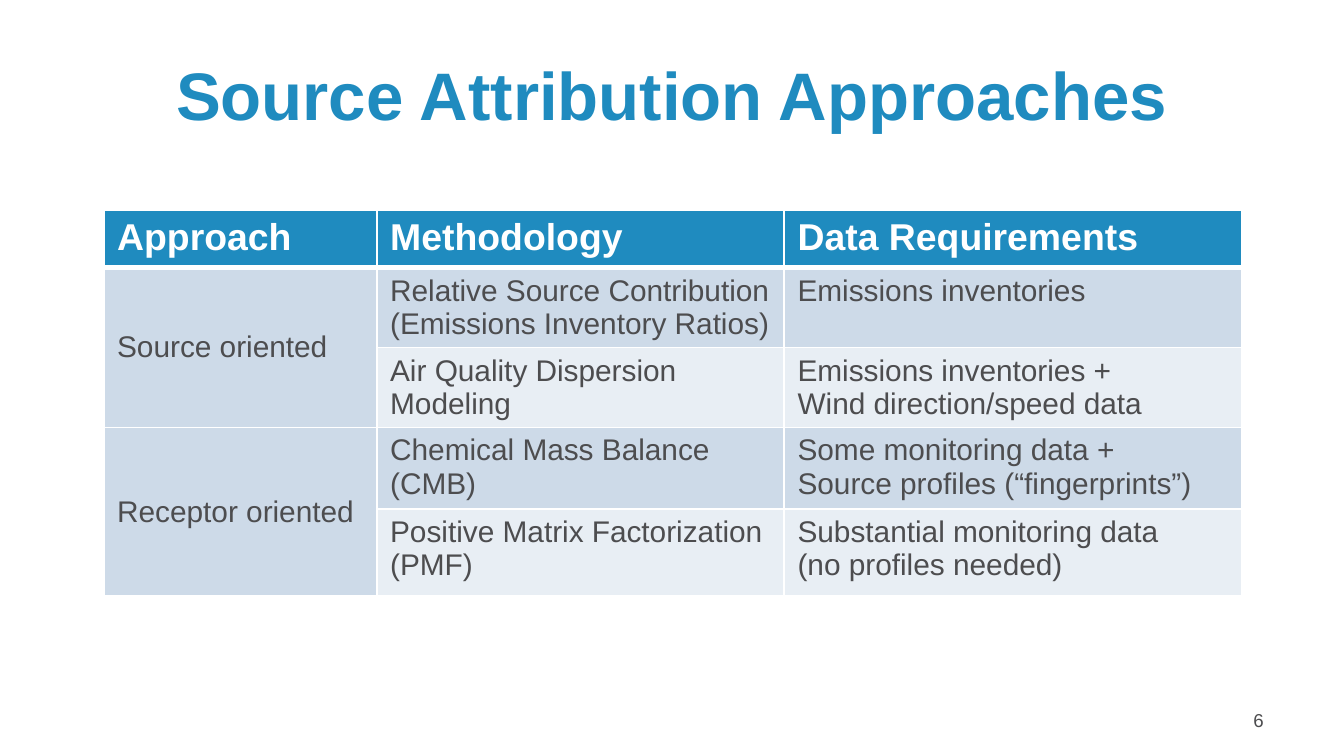
from dataclasses import dataclass

from lxml import etree
from pptx import Presentation
from pptx import util as u
from pptx.dml.color import RGBColor
from pptx.enum import text
from pptx.oxml import ns


@dataclass(frozen=True)
class Theme:
    font: str = "Arial"
    accent: str = "1F8BBF"
    ink: str = "4D4D4F"
    white: str = "FFFFFF"
    band_dark: str = "CDDAE8"
    band_light: str = "E8EEF4"
    title_size: int = 36
    header_size: int = 20
    body_size: int = 16
    number_size: int = 10
    thin_rule: int = 1
    thick_rule: int = 3


class SlideBuilder:
    def __init__(self, slide, theme):
        self.slide = slide
        self.theme = theme

    def add_lines(self, frame, lines, size, color, bold=False, align=None):
        """Fill a text frame with one paragraph per line."""
        for index, line in enumerate(lines):
            paragraph = frame.add_paragraph() if index else frame.paragraphs[0]
            paragraph.alignment = align
            run = paragraph.add_run()
            run.text = line
            run.font.name = self.theme.font
            run.font.size = u.Pt(size)
            run.font.bold = bold
            run.font.color.rgb = RGBColor.from_string(color)

    def title(self, words, left, top, width, height):
        heading = self.slide.shapes.title
        heading.left, heading.top = u.Cm(left), u.Cm(top)
        heading.width, heading.height = u.Cm(width), u.Cm(height)
        frame = heading.text_frame
        frame.auto_size = text.MSO_AUTO_SIZE.NONE
        frame.vertical_anchor = text.MSO_ANCHOR.MIDDLE
        self.add_lines(frame, [words], self.theme.title_size,
                       self.theme.accent, True, text.PP_ALIGN.CENTER)

    def page_number(self, number, left, top, width, height):
        box = self.slide.shapes.add_textbox(
            u.Cm(left), u.Cm(top), u.Cm(width), u.Cm(height))
        frame = box.text_frame
        frame.word_wrap = True
        frame.vertical_anchor = text.MSO_ANCHOR.MIDDLE
        self.add_lines(frame, [number], self.theme.number_size,
                       self.theme.ink, align=text.PP_ALIGN.RIGHT)

    def borders(self, cell, top, bottom):
        properties = cell._tc.get_or_add_tcPr()
        thin = self.theme.thin_rule
        for side, width in zip("LRTB", (thin, thin, top, bottom)):
            line = etree.SubElement(properties, ns.qn(f"a:ln{side}"),
                                    w=str(u.Pt(width)))
            fill = etree.SubElement(line, ns.qn("a:solidFill"))
            etree.SubElement(fill, ns.qn("a:srgbClr"), val=self.theme.white)

    def table(self, rows, left, top, widths, heights):
        theme = self.theme
        grid = self.slide.shapes.add_table(
            len(rows), len(widths), u.Cm(left), u.Cm(top),
            u.Cm(sum(widths)), u.Cm(sum(heights))).table
        for column, width in zip(grid.columns, widths):
            column.width = u.Cm(width)
        for row, height in zip(grid.rows, heights):
            row.height = u.Cm(height)

        for r, row in enumerate(rows):
            for c, lines in enumerate(row):
                cell = grid.cell(r, c)
                self.borders(
                    cell,
                    top=theme.thick_rule if r == 1 else theme.thin_rule,
                    bottom=theme.thick_rule if r == 0 else theme.thin_rule)
                band = theme.band_dark if r % 2 else theme.band_light
                cell.fill.solid()
                cell.fill.fore_color.rgb = RGBColor.from_string(
                    band if r else theme.accent)
                if lines is None:  # continues the cell above
                    grid.cell(r - 1, c).merge(cell)
                    grid.cell(r - 1, c).vertical_anchor = text.MSO_ANCHOR.MIDDLE
                elif r == 0:
                    self.add_lines(cell.text_frame, lines, theme.header_size,
                                   theme.white, True)
                else:
                    self.add_lines(cell.text_frame, lines, theme.body_size,
                                   theme.ink)


APPROACHES = [
    [["Approach"], ["Methodology"], ["Data Requirements"]],
    [["Source oriented"],
     ["Relative Source Contribution (Emissions Inventory Ratios)"],
     ["Emissions inventories"]],
    [None,
     ["Air Quality Dispersion Modeling"],
     ["Emissions inventories +", "Wind direction/speed data"]],
    [["Receptor oriented"],
     ["Chemical Mass Balance (CMB)"],
     ["Some monitoring data +", "Source profiles (“fingerprints”)"]],
    [None,
     ["Positive Matrix Factorization (PMF)"],
     ["Substantial monitoring data", "(no profiles needed)"]],
]


def main():
    deck = Presentation()
    deck.slide_width, deck.slide_height = u.Cm(25.4), u.Cm(14.29)
    title_only = deck.slide_layouts[5]
    builder = SlideBuilder(deck.slides.add_slide(title_only), Theme())

    # Heading
    builder.title("Source Attribution Approaches", 1.27, 0.58, 22.86, 2.39)

    # Comparison of approaches
    builder.table(APPROACHES, left=1.96, top=3.97,
                  widths=[5.16, 7.7, 8.64],
                  heights=[1.09, 1.5, 1.5, 1.54, 1.65])

    # Page number
    builder.page_number("6", 21.59, 13.23, 2.54, 0.76)

    deck.save("out.pptx")


if __name__ == "__main__":
    main()
